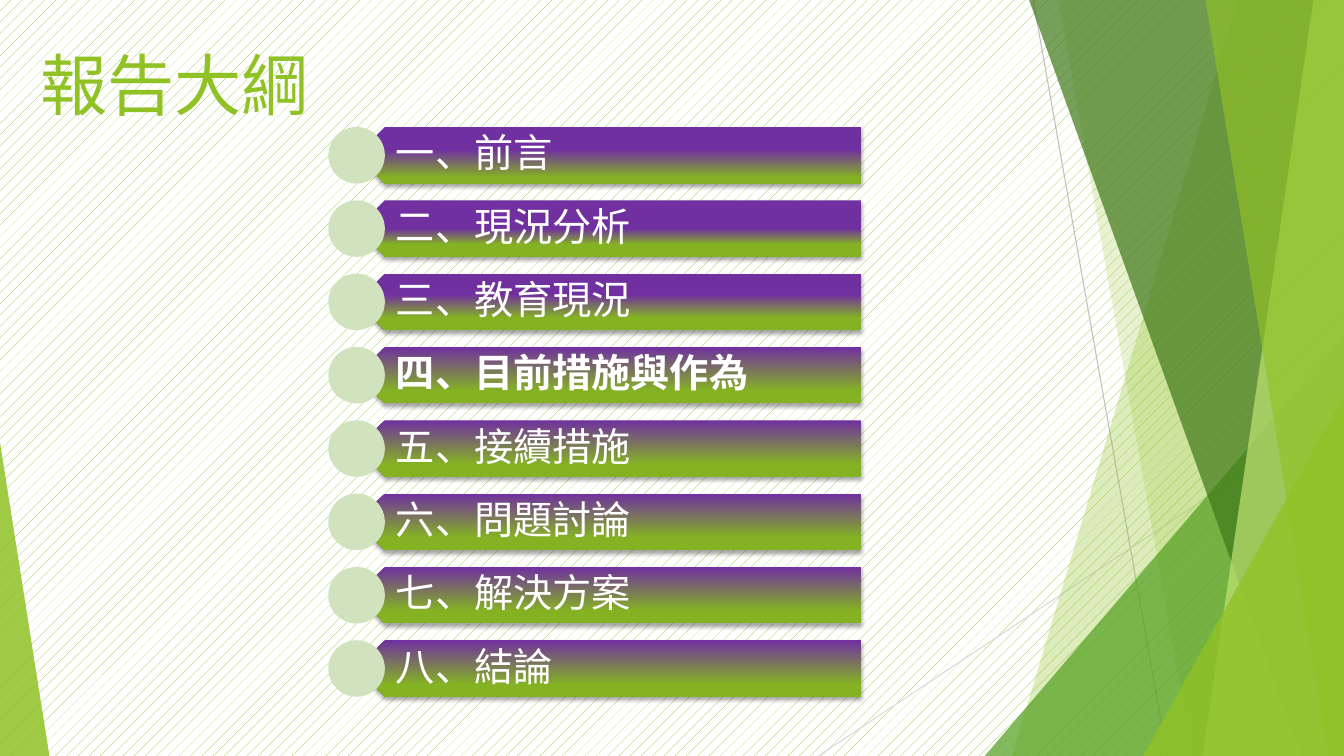
from lxml import etree
from pptx import Presentation
from pptx.dml.color import RGBColor
from pptx.enum.dml import MSO_PATTERN
from pptx.enum.shapes import MSO_CONNECTOR, MSO_SHAPE
from pptx.enum.text import MSO_ANCHOR, PP_ALIGN
from pptx.oxml.ns import qn
from pptx.util import Pt

TRIANGLE = MSO_SHAPE.ISOSCELES_TRIANGLE
PENTAGON = MSO_SHAPE.PENTAGON
OVAL = MSO_SHAPE.OVAL
STRAIGHT = MSO_CONNECTOR.STRAIGHT
PCT10 = MSO_PATTERN.PERCENT_10
MIDDLE = MSO_ANCHOR.MIDDLE
CENTER = PP_ALIGN.CENTER

WIDTH, HEIGHT = 960, 540
FONT = "Noto Sans CJK SC"
COLORS = {
    "lime": "90C226", "green": "54A021", "forest": "3F7819", "pale": "C0E474",
    "dot": "D1E3BE", "purple": "7030A0", "olive": "7D864C", "leaf": "84B223",
    "white": "FFFFFF", "black": "000000", "gray": "BFBFBF", "light_gray": "D9D9D9",
}


def rgb(color):
    return RGBColor.from_string(COLORS[color])


def add_color(parent, color, alpha=None):
    node = etree.SubElement(parent, qn("a:srgbClr"), val=COLORS[color])
    if alpha is not None:
        etree.SubElement(node, qn("a:alpha"), val=str(alpha * 1000))


class OutlineSlide:
    """Holds the style and the current slide; lengths are in points."""

    def __init__(self, deck):
        self.slide = deck.slides.add_slide(deck.slide_layouts[5])
        self.shapes = self.slide.shapes

    def background(self, fore, back):
        fill = self.slide.background.fill
        fill.patterned()
        fill.pattern = PCT10
        fill.fore_color.rgb = rgb(fore)
        fill.back_color.rgb = rgb(back)

    def paint(self, shape, color, alpha=None):
        shape.shadow.inherit = False
        shape.line.fill.background()
        shape.fill.solid()
        shape.fill.fore_color.rgb = rgb(color)
        if alpha is not None:
            node = shape.fill._xPr.find(qn("a:solidFill"))
            node.clear()
            add_color(node, color, alpha)

    def preset(self, kind, box, color, alpha=None):
        shape = self.shapes.add_shape(kind, *map(Pt, box))
        self.paint(shape, color, alpha)
        return shape

    def triangle(self, box, apex, color, alpha):
        self.preset(TRIANGLE, box, color, alpha).adjustments[0] = apex

    def band(self, top_x, bottom_x, color, alpha):
        """A full-height panel with a slanted left edge."""
        builder = self.shapes.build_freeform(Pt(top_x), 0)
        corners = [(WIDTH, 0), (WIDTH, HEIGHT), (bottom_x, HEIGHT)]
        builder.add_line_segments([(Pt(x), Pt(y)) for x, y in corners], close=True)
        self.paint(builder.convert_to_shape(), color, alpha)

    def line(self, start, end, color):
        line = self.shapes.add_connector(STRAIGHT, *map(Pt, start + end))
        line.line.color.rgb = rgb(color)
        line.line.width = Pt(0.75)
        etree.SubElement(line._element.spPr, qn("a:effectLst"))

    def format_text(self, paragraph, size, color, bold=False):
        for run in paragraph.runs:
            run.font.size = Pt(size)
            run.font.bold = bold
            run.font.name = FONT
            run.font.color.rgb = rgb(color)
            etree.SubElement(run.font._element, qn("a:ea"), typeface=FONT)

    def title(self, text, box):
        title = self.shapes.title
        title.left, title.top, title.width, title.height = map(Pt, box)
        title.text_frame.text = text
        title.text_frame.vertical_anchor = MIDDLE
        paragraph = title.text_frame.paragraphs[0]
        paragraph.alignment = CENTER
        self.format_text(paragraph, 48, "lime")

    def gradient_bar(self, box, stops):
        bar = self.preset(PENTAGON, box, "leaf")
        bar.rotation = 180
        properties = bar._element.spPr
        gradient = etree.Element(qn("a:gradFill"), rotWithShape="0")
        stop_list = etree.SubElement(gradient, qn("a:gsLst"))
        for position, color in stops:
            stop = etree.SubElement(stop_list, qn("a:gs"), pos=str(position * 1000))
            add_color(stop, color)
        etree.SubElement(gradient, qn("a:lin"), ang="5400000", scaled="0")
        properties.replace(properties.find(qn("a:solidFill")), gradient)
        shadow = etree.SubElement(
            properties.find(qn("a:effectLst")), qn("a:outerShdw"),
            blurRad=str(Pt(3)), dist=str(Pt(2)), dir="5400000", rotWithShape="0")
        add_color(shadow, "black", 35)

    def label(self, text, box, bold):
        frame = self.shapes.add_textbox(*map(Pt, box)).text_frame
        frame.word_wrap = True
        frame.vertical_anchor = MIDDLE
        frame.margin_left, frame.margin_right = Pt(18), Pt(16)
        frame.margin_top = frame.margin_bottom = Pt(8.6)
        frame.text = text
        paragraph = frame.paragraphs[0]
        paragraph.line_spacing = 0.9
        paragraph.space_after = Pt(9.8)
        self.format_text(paragraph, 28, "white", bold)


def main():
    deck = Presentation()
    deck.slide_width, deck.slide_height = Pt(WIDTH), Pt(HEIGHT)
    page = OutlineSlide(deck)
    page.background("lime", "white")

    # Facets along the right and left edges
    page.line((738, 0), (833.8, HEIGHT), "gray")
    page.line((WIDTH, 290.2), (584.6, HEIGHT), "light_gray")
    page.band(884.2, 722.9, "lime", 30)
    page.band(756, 851.8, "lime", 20)
    page.triangle((703.4, 240, 256.6, 300), 1, "green", 72)
    page.band(735.1, 929.5, "forest", 70)
    page.band(938.2, 859, "pale", 70)
    page.band(861.1, 949, "lime", 65)
    page.triangle((816.5, 283, 143.5, 257), 1, "lime", 80)
    page.triangle((0, 316, 35.3, 224), 0, "lime", 85)

    # Title
    page.title("報告大綱", (-213.8, 29.5, 676.8, 61.2))

    # Outline entries: bar, label and dot in each row
    fade = [(0, "purple"), (78, "leaf")]
    entries = [
        ("一、前言", [(40, "purple"), (73, "olive"), (89, "leaf")]),
        ("二、現況分析", [(50, "purple"), (78, "leaf")]),
        ("三、教育現況", [(37, "purple"), (78, "leaf")]),
        ("四、目前措施與作為", fade),
        ("五、接續措施", fade),
        ("六、問題討論", fade),
        ("七、解決方案", fade),
        ("八、結論", fade),
    ]
    current = "四、目前措施與作為"
    first_top, pitch, size = 90.7, 52.37, 40.4
    for row, (entry, stops) in enumerate(entries):
        top = first_top + row * pitch
        page.gradient_bar((254.7, top, 360.5, size), stops)
        page.label(entry, (264.8, top, 350.4, size), entry == current)
        page.preset(OVAL, (234.5, top, size, size), "dot")

    deck.save("out.pptx")


if __name__ == "__main__":
    main()
